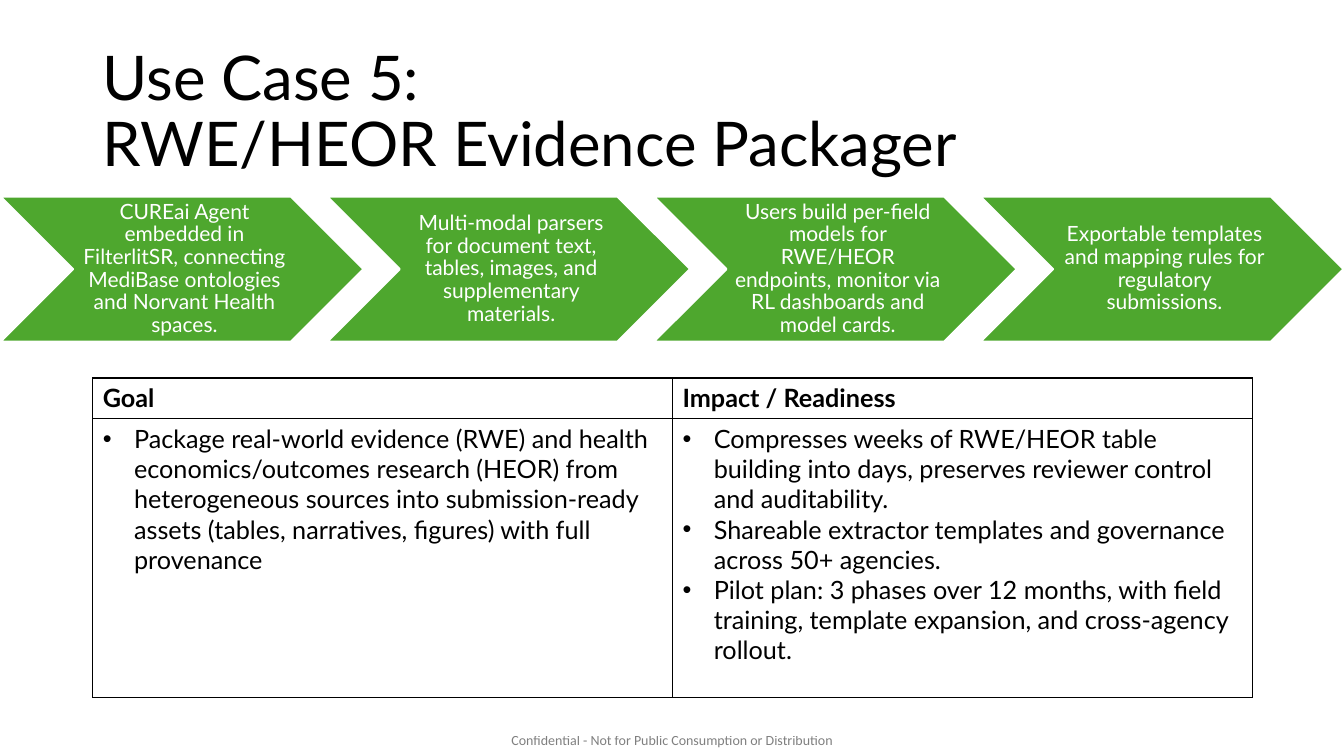
from lxml import etree
from pptx import Presentation
from pptx.dml.color import RGBColor
from pptx.enum.shapes import MSO_SHAPE
from pptx.enum.text import MSO_ANCHOR, PP_ALIGN
from pptx.oxml.ns import qn
from pptx.util import Inches, Pt

TITLE = "Use Case 5:\vRWE/HEOR Evidence Packager"
STEPS = [
    "CUREai Agent embedded in FilterlitSR, connecting MediBase ontologies and Norvant Health spaces.",
    "Multi-modal parsers for document text, tables, images, and supplementary materials.",
    "Users build per-field models for RWE/HEOR endpoints, monitor via RL dashboards and model cards.",
    "Exportable templates and mapping rules for regulatory submissions.",
]
COLUMNS = {
    "Goal": [
        "Package real-world evidence (RWE) and health economics/outcomes research (HEOR) from "
        "heterogeneous sources into submission-ready assets (tables, narratives, figures) with "
        "full provenance",
    ],
    "Impact / Readiness": [
        "Compresses weeks of RWE/HEOR table building into days, preserves reviewer control and "
        "auditability.",
        "Shareable extractor templates and governance across 50+ agencies.",
        "Pilot plan: 3 phases over 12 months, with field training, template expansion, and "
        "cross-agency rollout.",
    ],
}
FOOTER = "Confidential - Not for Public Consumption or Distribution"

BLACK = RGBColor(0x00, 0x00, 0x00)
WHITE = RGBColor(0xFF, 0xFF, 0xFF)
GREEN = RGBColor(0x4E, 0xA7, 0x2E)
CHEVRON = MSO_SHAPE.CHEVRON
MIDDLE = MSO_ANCHOR.MIDDLE
CENTER = PP_ALIGN.CENTER

SLIDE_W, SLIDE_H = 13.33, 7.5
MARGIN = 0.92
CONTENT_W = 11.5
STEP_W, STEP_H, STEP_TOP = 3.6, 1.44, 1.95
STEP_PITCH = STEP_W * 0.9
STEP_LEFT = (SLIDE_W - STEP_W - STEP_PITCH * (len(STEPS) - 1)) / 2
TABLE_TOP = SLIDE_H / 2
ROW_HEIGHTS = [0.4, 2.77]
FOOTER_W, FOOTER_H, FOOTER_TOP = 3.23, 0.17, 7.26


def set_font(p, size, color, name="Lato", bold=False):
    for r in p.runs:
        r.font.name = name
        r.font.size = Pt(size)
        r.font.bold = bold
        r.font.color.rgb = color


def set_insets(tf, left, top, right, bottom):
    tf.margin_left, tf.margin_top = Inches(left), Inches(top)
    tf.margin_right, tf.margin_bottom = Inches(right), Inches(bottom)


def add_text(slide, text, left, top, width, height):
    s = slide.shapes.add_textbox(Inches(left), Inches(top), Inches(width), Inches(height))
    tf = s.text_frame
    tf.word_wrap = True
    tf.text = text
    return tf


def add_step(slide, index, text):
    s = slide.shapes.add_shape(
        CHEVRON, Inches(STEP_LEFT + index * STEP_PITCH), Inches(STEP_TOP),
        Inches(STEP_W), Inches(STEP_H))
    s.shadow.inherit = False
    s.fill.solid()
    s.fill.fore_color.rgb = GREEN
    s.line.color.rgb = WHITE
    s.line.width = Pt(1.5)
    tf = s.text_frame
    tf.word_wrap = True
    tf.vertical_anchor = MIDDLE
    set_insets(tf, 0.07, 0.02, 0.02, 0.02)
    tf.text = text
    p = tf.paragraphs[0]
    p.alignment = CENTER
    p.line_spacing = 0.9
    set_font(p, 15, WHITE)


def style_cell(cell):
    tcPr = cell._tc.get_or_add_tcPr()
    for side in ("a:lnL", "a:lnR", "a:lnT", "a:lnB"):
        ln = etree.SubElement(tcPr, qn(side), w=str(Pt(1)))
        fill = etree.SubElement(ln, qn("a:solidFill"))
        etree.SubElement(fill, qn("a:srgbClr"), val=str(BLACK))
    cell.fill.background()


def add_bullet(p):
    pPr = p._p.get_or_add_pPr()
    pPr.set("marL", str(Inches(0.31)))
    pPr.set("indent", str(-Inches(0.31)))
    etree.SubElement(pPr, qn("a:buFont"), typeface="Arial")
    etree.SubElement(pPr, qn("a:buChar"), char="•")


def add_goal_table(slide):
    table = slide.shapes.add_table(
        len(ROW_HEIGHTS), len(COLUMNS), Inches(MARGIN), Inches(TABLE_TOP),
        Inches(CONTENT_W), Inches(sum(ROW_HEIGHTS))).table
    table.first_row = False
    table.horz_banding = False
    for row, height in zip(table.rows, ROW_HEIGHTS):
        row.height = Inches(height)
    for col, (heading, points) in enumerate(COLUMNS.items()):
        for row, lines in enumerate(([heading], points)):
            cell = table.cell(row, col)
            style_cell(cell)
            cell.text = "\n".join(lines)
            for p in cell.text_frame.paragraphs:
                if row:
                    add_bullet(p)
                set_font(p, 18, BLACK, bold=row == 0)


def main():
    prs = Presentation()
    prs.slide_width, prs.slide_height = Inches(SLIDE_W), Inches(SLIDE_H)
    slide = prs.slides.add_slide(prs.slide_layouts[6])

    tf = add_text(slide, FOOTER, (SLIDE_W - FOOTER_W) / 2, FOOTER_TOP, FOOTER_W, FOOTER_H)
    tf.word_wrap = False
    set_insets(tf, 0, 0, 0, 0)
    p = tf.paragraphs[0]
    p.alignment = CENTER
    set_font(p, 10, BLACK, "Calibri")
    for color in p._p.iter(qn("a:srgbClr")):
        etree.SubElement(color, qn("a:alpha"), val="50000")

    tf = add_text(slide, TITLE, MARGIN, 0.4, CONTENT_W, 1.45)
    tf.vertical_anchor = MIDDLE
    p = tf.paragraphs[0]
    p.line_spacing = 0.9
    set_font(p, 44, BLACK)

    add_goal_table(slide)
    for index, text in enumerate(STEPS):
        add_step(slide, index, text)

    prs.save("out.pptx")


if __name__ == "__main__":
    main()
